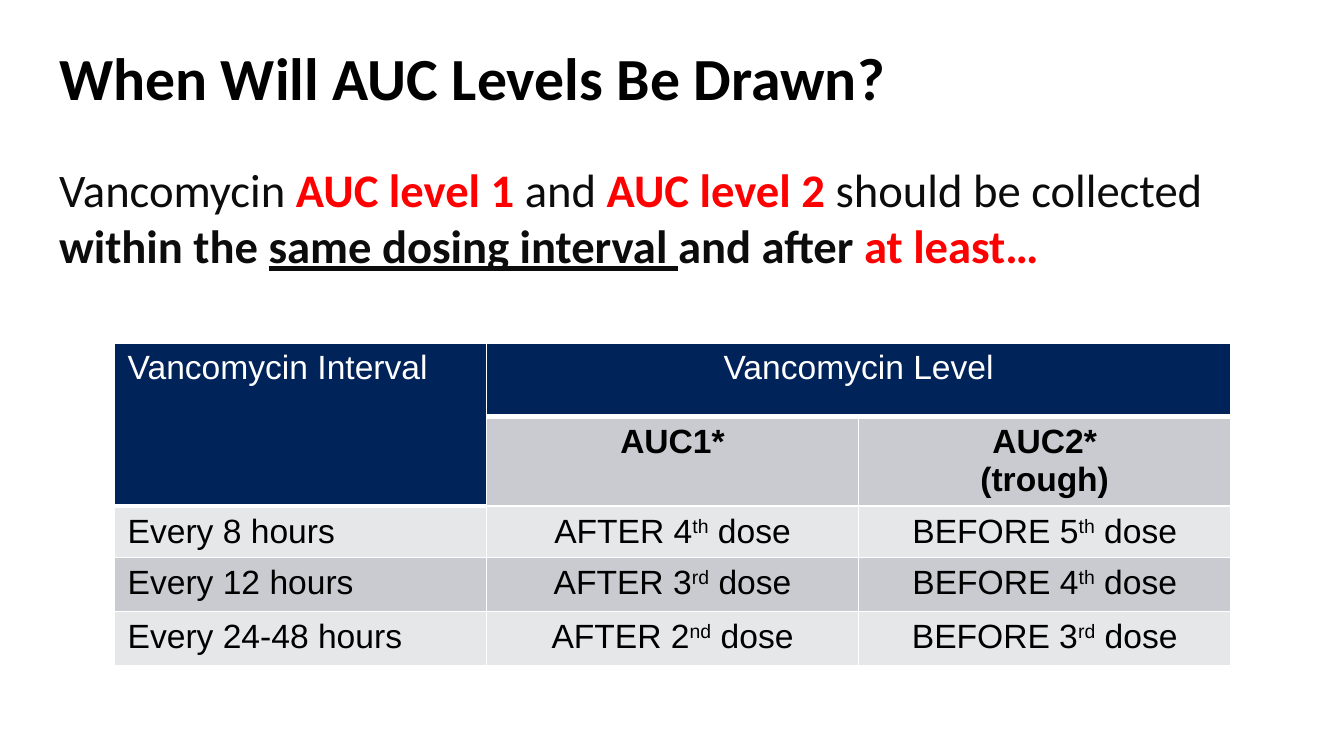
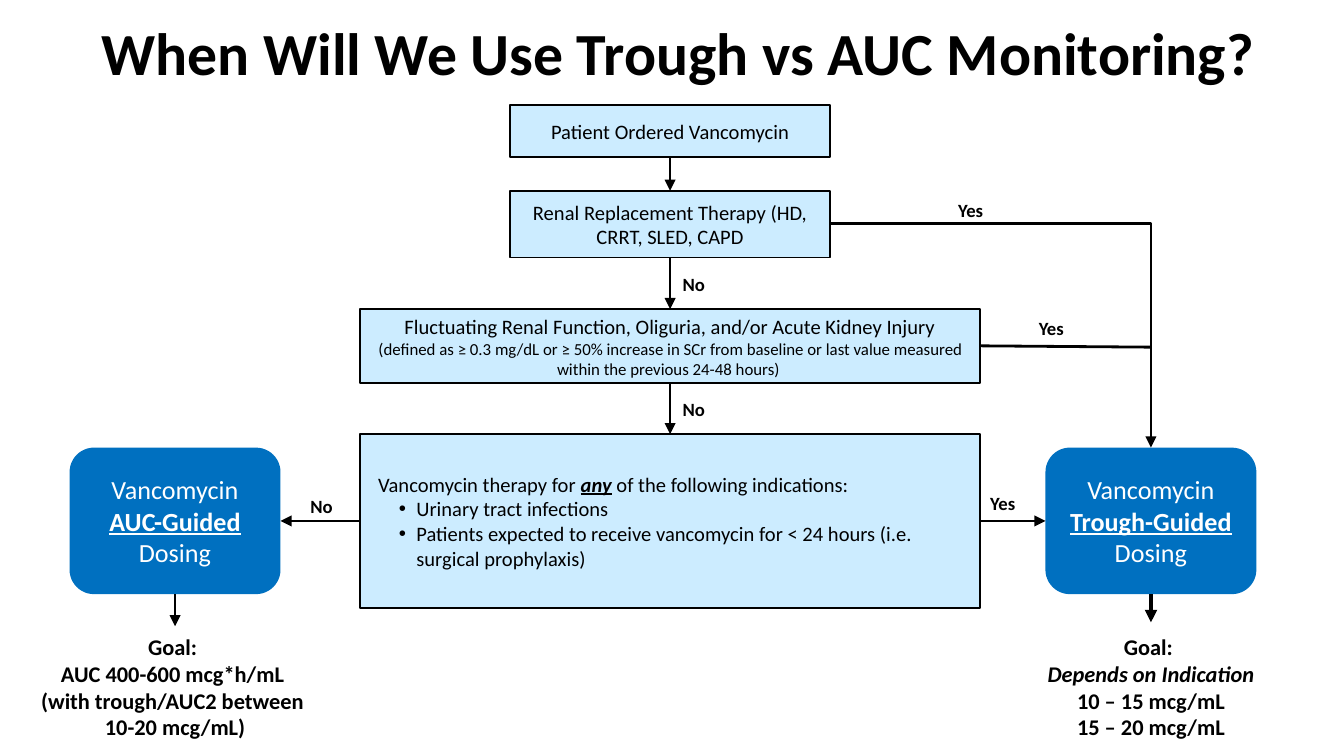
from lxml.etree import SubElement
from pptx import Presentation
from pptx.dml.color import RGBColor
from pptx.enum.shapes import MSO_CONNECTOR, MSO_SHAPE
from pptx.enum.text import MSO_ANCHOR, MSO_AUTO_SIZE, PP_ALIGN
from pptx.oxml.ns import qn
from pptx.util import Pt

BLACK, WHITE, RED, INK = "000000", "FFFFFF", "FF0000", "0C0C0C"
NAVY, GREY, PALE_GREY = "00235A", "CACBD0", "E6E7E9"
PALE_BLUE, BLUE = "CCECFF", "0070C0"
LEFT, CENTER = PP_ALIGN.LEFT, PP_ALIGN.CENTER
TOP, MIDDLE = MSO_ANCHOR.TOP, MSO_ANCHOR.MIDDLE


def rgb(colour):
    return RGBColor.from_string(colour)


def write(frame, paragraphs, size, colour=BLACK, align=CENTER, anchor=TOP,
          font="Calibri", inset=3.6):
    """Each run is (text, flags): b bold, i italic, u underlined, r red, ^ raised."""
    frame.word_wrap = True
    frame.auto_size = MSO_AUTO_SIZE.NONE
    frame.vertical_anchor = anchor
    frame.margin_left = frame.margin_right = Pt(7.2)
    frame.margin_top = frame.margin_bottom = Pt(inset)
    for index, runs in enumerate(paragraphs):
        paragraph = frame.add_paragraph() if index else frame.paragraphs[0]
        paragraph.alignment = align
        paragraph.space_before = Pt(0)
        for text, flags in runs:
            run = paragraph.add_run()
            run.text = text
            run.font.name, run.font.size = font, Pt(size)
            run.font.bold = "b" in flags
            run.font.italic = "i" in flags
            run.font.underline = "u" in flags
            run.font.color.rgb = rgb(RED if "r" in flags else colour)
            if "^" in flags:
                run.font._element.set("baseline", "30000")


prs = Presentation()
prs.slide_width, prs.slide_height = Pt(720), Pt(405)

# Slides and titles
slides = []
for layout, heading, left, top, align in [
    (1, "When Will AUC Levels Be Drawn?", 24.5, 14.4, LEFT),
    (5, "When Will We Use Trough vs AUC Monitoring?", 28, 1.4, CENTER),
]:
    slide = prs.slides.add_slide(prs.slide_layouts[layout])
    title = slide.shapes.title
    title.left, title.top, title.width, title.height = Pt(left), Pt(top), Pt(671), Pt(52.6)
    write(title.text_frame, [[(heading, "b")]], 32, align=align, inset=7.2)
    slides.append(slide)
levels, flow = slides

# Slide 1: collection rule
rule = levels.placeholders[1]
rule.left, rule.top, rule.width, rule.height = Pt(24.5), Pt(79.2), Pt(671), Pt(282)
write(rule.text_frame, [[
    ("Vancomycin ", ""), ("AUC level 1", "br"), (" and ", ""), ("AUC level 2", "br"),
    (" should be collected ", ""), ("within the ", "b"), ("same dosing interval ", "bu"),
    ("and after", "b"), (" at least…", "br"),
]], 25, INK, LEFT, inset=7.2)
rule_format = rule.text_frame.paragraphs[0]._p.get_or_add_pPr()
rule_format.set("marL", "0")
rule_format.set("indent", "0")
SubElement(rule_format, qn("a:buNone"))

# Slide 1: dosing table
schedule = [
    [[[("Vancomycin Interval", "")]], [[("Vancomycin Level", "")]], []],
    [[], [[("AUC1*", "b")]], [[("AUC2*", "b")], [("(trough)", "b")]]],
]
for interval, first, second in [
    ("Every 8 hours", ("4", "th"), ("5", "th")),
    ("Every 12 hours", ("3", "rd"), ("4", "th")),
    ("Every 24-48 hours", ("2", "nd"), ("3", "rd")),
]:
    doses = [[[(f"{when} {number}", ""), (suffix, "^"), (" dose", "")]]
             for when, (number, suffix) in (("AFTER", first), ("BEFORE", second))]
    schedule.append([[[(interval, "")]], *doses])

row_heights = [39.5, 48, 27.5, 29, 29]
dosing = levels.shapes.add_table(
    5, 3, Pt(61.2), Pt(183.6), Pt(598.2), Pt(sum(row_heights))).table
dosing.horz_banding = False
for column in dosing.columns:
    column.width = Pt(199.4)
for row, height in zip(dosing.rows, row_heights):
    row.height = Pt(height)
dosing.cell(0, 0).merge(dosing.cell(1, 0))
dosing.cell(0, 1).merge(dosing.cell(0, 2))

thick_below = {(0, 0), (1, 0), (0, 1), (0, 2)}
for r, contents in enumerate(schedule):
    for c, paragraphs in enumerate(contents):
        cell = dosing.cell(r, c)
        header = (r, c) in thick_below
        borders = {"lnL": 1, "lnR": 1, "lnT": 3 if (r - 1, c) in thick_below else 1,
                   "lnB": 3 if header else 1}
        for side, width in borders.items():
            border = SubElement(cell._tc.get_or_add_tcPr(), qn(f"a:{side}"), w=str(Pt(width)))
            SubElement(SubElement(border, qn("a:solidFill")), qn("a:srgbClr"), val=WHITE)
        cell.fill.solid()
        cell.fill.fore_color.rgb = rgb(NAVY if header else GREY if r % 2 else PALE_GREY)
        if paragraphs:
            write(cell.text_frame, paragraphs, 18, WHITE if header else BLACK,
                  CENTER if c else LEFT, font="Arial")

# Slide 2: boxes, as centre, top, width, height
AXIS, AUC_X, TROUGH_X = 359, 93.8, 616.6
ROUND, RECT = MSO_SHAPE.ROUNDED_RECTANGLE, MSO_SHAPE.RECTANGLE
steps = [
    (AXIS, 56.2, 171.4, 28, [[("Patient Ordered Vancomycin", "")]]),
    (AXIS, 102.2, 171.4, 35.8, [[("Renal Replacement Therapy (HD, CRRT, SLED, CAPD", "")]]),
    (AXIS, 165.6, 332, 39.6, [
        [("Fluctuating Renal Function, Oliguria, and/or Acute Kidney Injury", "")],
        [("(defined as ≥ 0.3 mg/dL or ≥ 50% increase in SCr from baseline or last value "
          "measured within the previous 24-48 hours) ", "")]]),
    (AXIS, 232.6, 332, 93, [
        [(" Vancomycin therapy for ", ""), ("any", "biu"),
         (" of the following indications:", "")],
        [("Urinary tract infections", "")],
        [("Patients expected to receive vancomycin for < 24 hours (i.e. surgical prophylaxis)",
          "")]]),
]
outcomes = [
    (x, 239.8, 113, 78.5, [[("Vancomycin", "")], [(name, "bu"), (" Dosing", "")]])
    for x, name in ((AUC_X, "AUC-Guided"), (TROUGH_X, "Trough-Guided"))
]
frames = []
for kind, fill, colour, size, boxes in [
    (RECT, PALE_BLUE, BLACK, 11, steps), (ROUND, BLUE, WHITE, 14, outcomes)
]:
    for x, top, width, height, paragraphs in boxes:
        box = flow.shapes.add_shape(kind, Pt(x - width / 2), Pt(top), Pt(width), Pt(height))
        box.shadow.inherit = False
        box.fill.solid()
        box.fill.fore_color.rgb = rgb(fill)
        if kind == RECT:
            box.line.color.rgb = rgb(BLACK)
            box.line.width = Pt(1)
        else:
            box.line.fill.background()
        write(box.text_frame, paragraphs, size, colour, anchor=MIDDLE)
        frames.append(box.text_frame)

# Slide 2: small definition line and bulleted indications
frames[2].paragraphs[1].runs[0].font.size = Pt(9)
for index, paragraph in enumerate(frames[3].paragraphs):
    paragraph.alignment = LEFT
    if index:
        bullet_format = paragraph._p.get_or_add_pPr()
        bullet_format.set("marL", str(Pt(23)))
        bullet_format.set("indent", str(Pt(-9.4)))
        SubElement(SubElement(bullet_format, qn("a:buClr")), qn("a:srgbClr"), val=BLACK)
        SubElement(bullet_format, qn("a:buFont"), typeface="Arial")
        SubElement(bullet_format, qn("a:buChar"), char="•")

# Slide 2: goals and branch labels
notes = [
    (AUC_X, 335.5, 187, 65.5, 12, CENTER, [
        "Goal: ", "AUC 400-600 mcg*h/mL ", "(with trough/AUC2 between ", "10-20 mcg/mL)"]),
    (TROUGH_X, 335.5, 143.3, 65.5, 12, CENTER, [
        "Goal: ", "Depends on Indication", "10 – 15 mcg/mL", "15 – 20 mcg/mL"]),
]
for answer, left, top in [
    ("Yes", 506.2, 103), ("Yes", 549.4, 166.3), ("Yes", 523.4, 260.2),
    ("No", 358.6, 142.6), ("No", 358.6, 209.8), ("No", 159.2, 261.4),
]:
    notes.append((left + 18.7, top, 37.4, 19.4, 10, LEFT, [answer]))
for x, top, width, height, size, align, lines in notes:
    note = flow.shapes.add_textbox(Pt(x - width / 2), Pt(top), Pt(width), Pt(height))
    write(note.text_frame,
          [[(line, "bi" if line.startswith("Depends") else "b")] for line in lines],
          size, align=align)

# Slide 2: connectors, as start, end, width, arrow, elbow
renal_right, wide_left, wide_right, middle = AXIS + 85.7, AXIS - 166, AXIS + 166, 279.1
links = [
    ((AXIS, above[1] + above[3]), (AXIS, below[1]), 1.5, True, False)
    for above, below in zip(steps, steps[1:])
] + [
    ((renal_right, 119.9), (TROUGH_X, 239.8), 1.5, True, True),
    ((wide_right, 185.3), (TROUGH_X, 186), 1.5, False, False),
    ((wide_right, middle), (TROUGH_X - 56.5, middle), 1.5, True, False),
    ((wide_left, middle), (AUC_X + 56.5, middle), 1.5, True, False),
    ((AUC_X, 318.3), (AUC_X, 335.5), 1.5, True, False),
    ((TROUGH_X, 318.3), (TROUGH_X, 333.4), 2.25, True, False),
]
for start, end, width, arrow, elbow in links:
    link = flow.shapes.add_connector(
        MSO_CONNECTOR.ELBOW if elbow else MSO_CONNECTOR.STRAIGHT,
        *(Pt(value) for value in start + end))
    link.line.color.rgb = rgb(BLACK)
    link.line.width = Pt(width)
    properties = link._element.spPr
    if elbow:
        properties.find(qn("a:prstGeom")).set("prst", "bentConnector2")
    if arrow:
        SubElement(properties.find(qn("a:ln")), qn("a:tailEnd"), type="triangle")
    SubElement(properties, qn("a:effectLst"))

prs.save("out.pptx")
